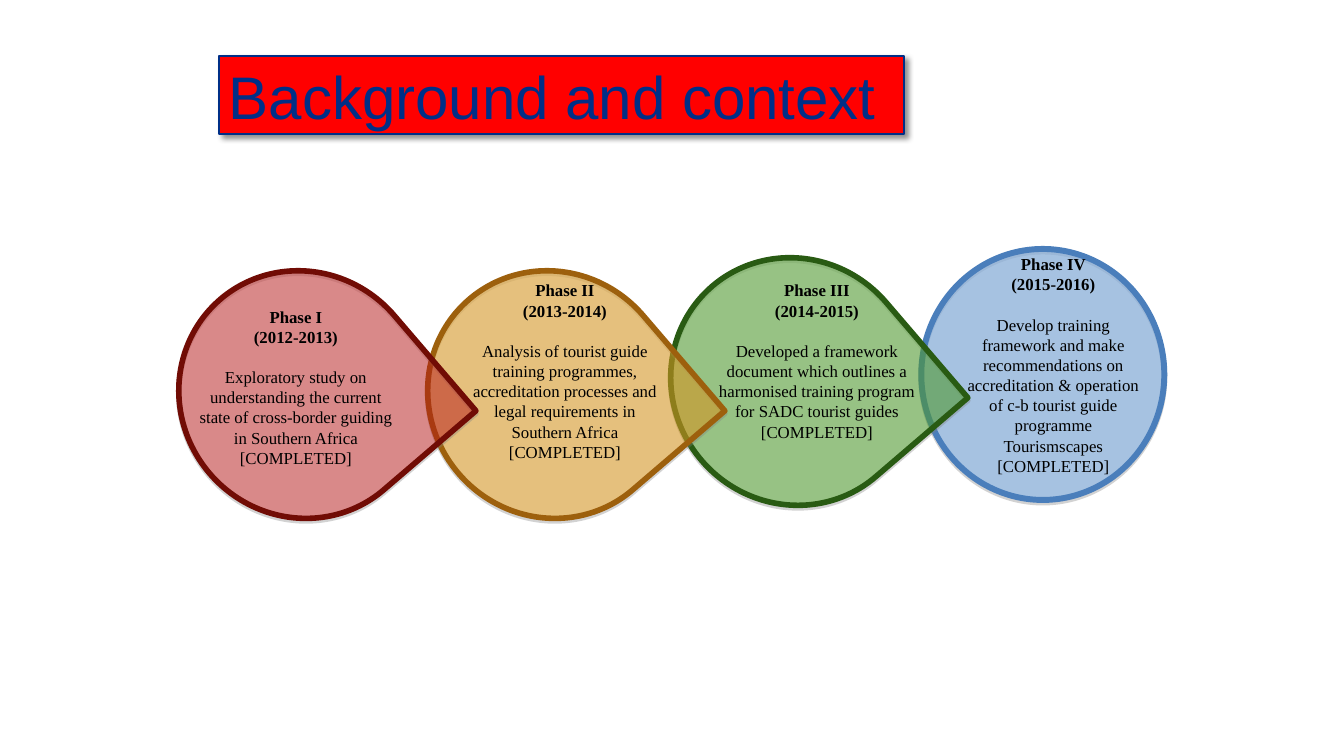
from lxml import etree
from pptx import Presentation
from pptx import util as u
from pptx.dml.color import RGBColor
from pptx.enum import shapes, text
from pptx.oxml.ns import qn

BLACK = RGBColor(0x00, 0x00, 0x00)
RED = RGBColor(0xFF, 0x00, 0x00)
NAVY = RGBColor(0x00, 0x2F, 0x87)
GREY = RGBColor(0x80, 0x80, 0x80)
ROSE, MAROON = RGBColor(0xC1, 0x02, 0x02), RGBColor(0x71, 0x0C, 0x05)
AMBER, BROWN = RGBColor(0xE3, 0x9A, 0x13), RGBColor(0x9D, 0x60, 0x0D)
LEAF, FOREST = RGBColor(0x47, 0x9D, 0x21), RGBColor(0x29, 0x5B, 0x13)
SKY, STEEL = RGBColor(0x66, 0x9E, 0xDC), RGBColor(0x4A, 0x7E, 0xBB)

# Content; every box is left, top, width, height on a grid of 100 columns and 100 rows
TITLE = "Background and context"
TITLE_BOX = (16.28, 7.47, 51, 10.27)
DROP = dict(kind=shapes.MSO_SHAPE.TEAR, size=(18.68, 32.13), turn=49.4, border=4)
CIRCLE = dict(kind=shapes.MSO_SHAPE.OVAL, size=(18.08, 33.2), turn=0, border=4.25)
PHASES = [
    dict(DROP, at=(13.13, 36.13), fill=ROSE, line=MAROON, opacity=42,
         words=(13.88, 39.87, 16.28, 24.53), heading=["Phase I", "(2012-2013)"],
         body=["Exploratory study on understanding the current state of "
               "cross-border guiding in Southern Africa [COMPLETED]"]),
    dict(DROP, at=(31.65, 36.13), fill=AMBER, line=BROWN, opacity=50,
         words=(33.9, 36.4, 16.28, 29.73), heading=["Phase II", "(2013-2014)"],
         body=["Analysis of tourist guide training programmes, accreditation "
               "processes and legal requirements in Southern Africa",
               "[COMPLETED]"]),
    dict(DROP, at=(49.73, 34.4), fill=LEAF, line=FOREST, opacity=50,
         words=(52.65, 36.4, 16.28, 29.73), heading=["Phase III", "(2014-2015)"],
         body=["Developed a framework document which outlines a harmonised "
               "training program for SADC tourist guides", "[COMPLETED]"]),
    dict(CIRCLE, at=(68.55, 32.93), fill=SKY, line=STEEL, opacity=50,
         words=(70.73, 32.93, 15.3, 35.6), heading=["Phase IV", "(2015-2016)"],
         body=["Develop training framework and make",
               "recommendations on accreditation & operation of c-b tourist "
               "guide programme", "Tourismscapes", "[COMPLETED]"]),
]
TITLE_FONT = dict(name="Arial", size=u.Pt(42.9))
PHASE_FONT = dict(name="Times New Roman", size=u.Pt(12))
LINE_PITCH = u.Pt(14.4)

prs = Presentation()
prs.slide_width, prs.slide_height = u.Inches(13.33), u.Inches(7.5)
slide = prs.slides.add_slide(prs.slide_layouts[6])


def place(left, top, width, height):
    column, row = prs.slide_width / 100, prs.slide_height / 100
    return [round(n * step) for n, step in
            zip((left, top, width, height), (column, row, column, row))]


def style_font(font, values, color):
    for key, value in values.items():
        setattr(font, key, value)
    font.color.rgb = color


def add_alpha(color_element, percent):
    etree.SubElement(color_element, qn("a:alpha"), val=str(percent * 1000))


def add_panel(kind, box, fill, line, border, shadow, opacity=100):
    panel = slide.shapes.add_shape(kind, *place(*box))
    panel.fill.solid()
    panel.fill.fore_color.rgb = fill
    if opacity < 100:
        add_alpha(panel.fill._xPr.find(".//" + qn("a:srgbClr")), opacity)
    panel.line.color.rgb = line
    panel.line.width = u.Pt(border)
    # Outer shadow: colour, opacity, blur, distance, angle
    color, strength, blur, distance, angle = shadow
    panel.shadow.inherit = False
    effects = panel._element.spPr.find(qn("a:effectLst"))
    outer = etree.SubElement(effects, qn("a:outerShdw"), blurRad=str(u.Pt(blur)),
                             dist=str(u.Pt(distance)), dir=str(angle * 60000),
                             algn="ctr", rotWithShape="0")
    add_alpha(etree.SubElement(outer, qn("a:srgbClr"), val=str(color)), strength)
    return panel


# Phase outlines, last one at the back
for phase in reversed(PHASES):
    outline = add_panel(phase["kind"], phase["at"] + phase["size"], phase["fill"],
                        phase["line"], phase["border"], (GREY, 35, 0, 1.8, 90),
                        phase["opacity"])
    outline.rotation = phase["turn"]

# Phase descriptions
for phase in PHASES:
    frame = slide.shapes.add_textbox(*place(*phase["words"])).text_frame
    frame.word_wrap = True
    heading_count = len(phase["heading"])
    for i, line in enumerate(phase["heading"] + phase["body"]):
        paragraph = frame.add_paragraph() if i else frame.paragraphs[0]
        paragraph.alignment = text.PP_ALIGN.CENTER
        paragraph.line_spacing = LINE_PITCH
        if i == heading_count:
            paragraph.space_before = LINE_PITCH
        run = paragraph.add_run()
        run.text = line
        style_font(run.font, dict(PHASE_FONT, bold=i < heading_count), BLACK)

# Title
title = add_panel(shapes.MSO_SHAPE.RECTANGLE, TITLE_BOX, RED, NAVY, 1.5,
                  (BLACK, 43, 4, 3, 45))
title.text_frame.vertical_anchor = text.MSO_ANCHOR.MIDDLE
title_line = title.text_frame.paragraphs[0]
title_line.alignment = text.PP_ALIGN.LEFT
title_run = title_line.add_run()
title_run.text = TITLE
style_font(title_run.font, TITLE_FONT, NAVY)

prs.save("out.pptx")
